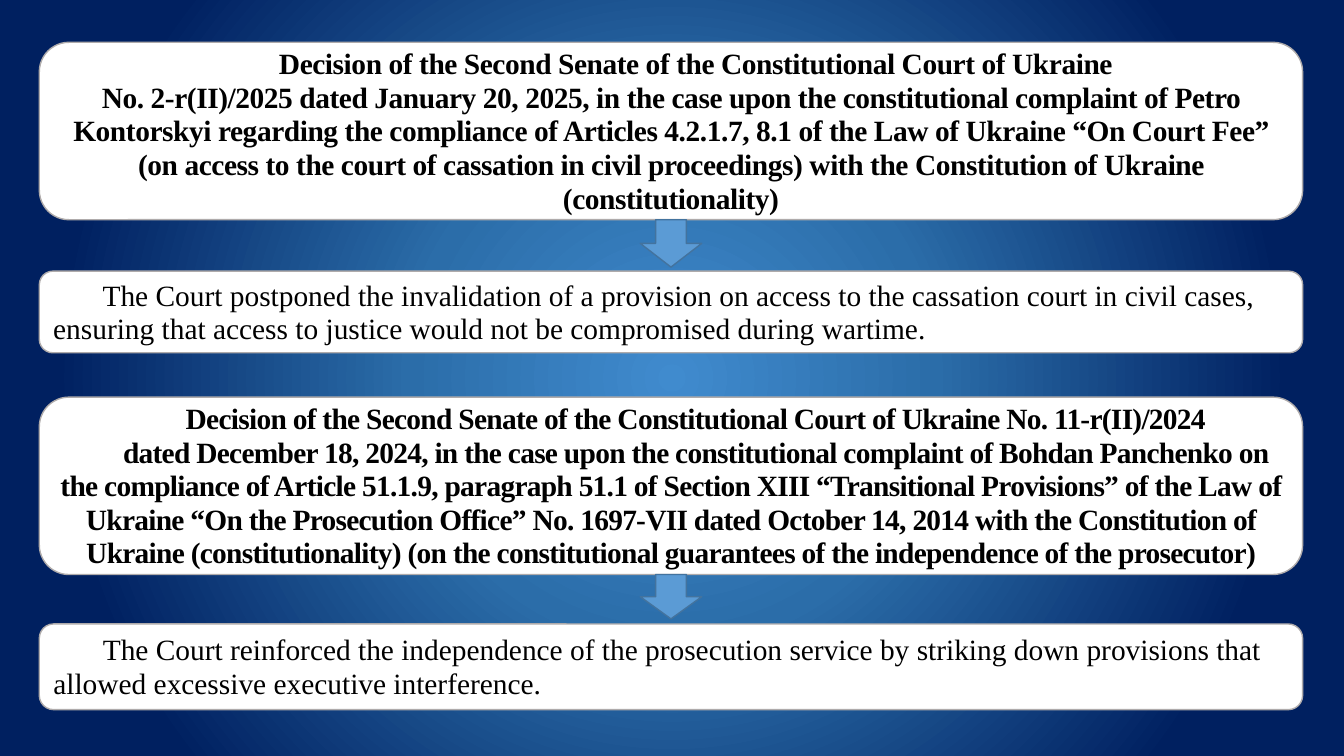
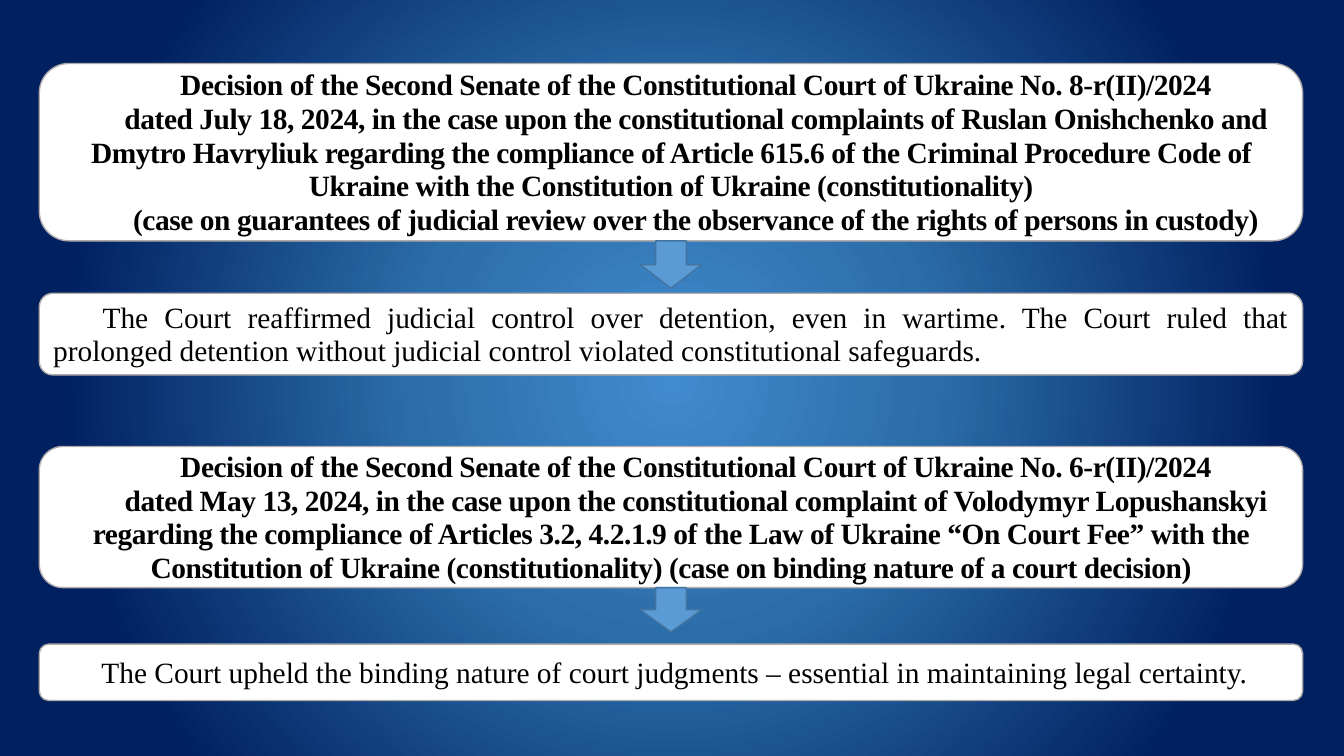
from lxml import etree
from pptx import Presentation
from pptx.dml.color import RGBColor
from pptx.enum import shapes, text
from pptx.oxml import ns
from pptx.util import Inches, Pt

COLORS = {
    "card": "FFFFFF", "card_line": "AFABAB",
    "arrow": "5B9BD5", "arrow_line": "43739E", "ink": "000000",
    "glow": "408BCE", "mid": "2B6DA9", "navy": "002060",
}
GLOW_STOPS = [(0, "glow"), (34, "mid"), (80, "navy")]
CARD_LEFT, CARD_WIDTH, ARROW_WIDTH = 0.39, 12.53, 0.61
FIRST_LINE = 0.49
FONT = {"name": "Times New Roman", "size": Pt(21)}
LEFT, CENTER, JUSTIFY = (
    text.PP_ALIGN.LEFT, text.PP_ALIGN.CENTER, text.PP_ALIGN.JUSTIFY)

SLIDES = [
    [
        {
            "decision": [
                "Decision of the Second Senate of the Constitutional Court of Ukraine\v"
                "No. 2-r(II)/2025 dated January 20, 2025, in the case upon the constitutional "
                "complaint of Petro Kontorskyi regarding the compliance of Articles 4.2.1.7, 8.1 "
                "of the Law of Ukraine “On Court Fee” (on access to the court of cassation in "
                "civil proceedings) with the Constitution of Ukraine (constitutionality)",
            ],
            "outcome": "The Court postponed the invalidation of a provision on access to the "
                       "cassation court in civil cases, ensuring that access to justice would "
                       "not be compromised during wartime.",
            "top": 0.42, "height": 1.76, "arrow": 0.47, "gap": 0.51,
            "outcome_height": 0.81, "tracking": -0.3, "align": LEFT,
        },
        {
            "decision": [
                "Decision of the Second Senate of the Constitutional Court of Ukraine "
                "No. 11-r(II)/2024",
                "dated December 18, 2024, in the case upon the constitutional complaint of "
                "Bohdan Panchenko on the compliance of Article 51.1.9, paragraph 51.1 of Section "
                "XIII “Transitional Provisions” of the Law of Ukraine “On the Prosecution "
                "Office” No. 1697-VII dated October 14, 2014 with the Constitution of Ukraine "
                "(constitutionality) (on the constitutional guarantees of the independence of "
                "the prosecutor)",
            ],
            "outcome": "The Court reinforced the independence of the prosecution service by "
                       "striking down provisions that allowed excessive executive interference.",
            "top": 3.94, "height": 1.76, "arrow": 0.44, "gap": 0.49,
            "outcome_height": 0.85, "tracking": -0.5, "align": LEFT,
        },
    ],
    [
        {
            "decision": [
                "Decision of the Second Senate of the Constitutional Court of Ukraine "
                "No. 8-r(II)/2024",
                "dated July 18, 2024, in the case upon the constitutional complaints of Ruslan "
                "Onishchenko and Dmytro Havryliuk regarding the compliance of Article 615.6 of "
                "the Criminal Procedure Code of Ukraine with the Constitution of Ukraine "
                "(constitutionality)",
                "(case on guarantees of judicial review over the observance of the rights of "
                "persons in custody)",
            ],
            "outcome": "The Court reaffirmed judicial control over detention, even in wartime. "
                       "The Court ruled that prolonged detention without judicial control "
                       "violated constitutional safeguards.",
            "top": 0.63, "height": 1.76, "arrow": 0.47, "gap": 0.52,
            "outcome_height": 0.81, "tracking": -0.3, "align": JUSTIFY,
        },
        {
            "decision": [
                "Decision of the Second Senate of the Constitutional Court of Ukraine "
                "No. 6-r(II)/2024",
                "dated May 13, 2024, in the case upon the constitutional complaint of Volodymyr "
                "Lopushanskyi regarding the compliance of Articles 3.2, 4.2.1.9 of the Law of "
                "Ukraine “On Court Fee” with the Constitution of Ukraine (constitutionality) "
                "(case on binding nature of a court decision)",
            ],
            "outcome": "The Court upheld the binding nature of court judgments – essential in "
                       "maintaining legal certainty.",
            "top": 4.43, "height": 1.4, "arrow": 0.44, "gap": 0.56,
            "outcome_height": 0.56, "tracking": -0.3, "align": LEFT,
        },
    ],
]


def color(name):
    return RGBColor.from_string(COLORS[name])


def paint_background(master):
    fill = master.background.fill
    fill.gradient()
    gradient = master.element.find(".//" + ns.qn("p:bgPr")).find(ns.qn("a:gradFill"))
    stops = "".join(
        f'<a:gs pos="{pos * 1000}"><a:srgbClr val="{COLORS[name]}"/></a:gs>'
        for pos, name in GLOW_STOPS)
    glow = etree.fromstring(
        f'<a:gradFill {ns.nsdecls("a")} rotWithShape="1"><a:gsLst>{stops}</a:gsLst>'
        '<a:path path="circle"><a:fillToRect l="50000" t="50000" r="50000" b="50000"/>'
        '</a:path></a:gradFill>')
    gradient.getparent().replace(gradient, glow)


def add_block(slide, preset, box, style):
    block = slide.shapes.add_shape(preset, *map(Inches, box))
    block.shadow.inherit = False
    block.fill.solid()
    block.fill.fore_color.rgb = color(style)
    block.line.color.rgb = color(style + "_line")
    block.line.width = Pt(1)
    return block


def add_card(slide, top, height, paragraphs, align, bold=False, tracking=0):
    card = add_block(slide, shapes.MSO_SHAPE.ROUNDED_RECTANGLE,
                     (CARD_LEFT, top, CARD_WIDTH, height), "card")
    frame = card.text_frame
    frame.word_wrap = True
    frame.vertical_anchor = text.MSO_ANCHOR.MIDDLE
    for index, wording in enumerate(paragraphs):
        paragraph = frame.add_paragraph() if index else frame.paragraphs[0]
        paragraph.text = wording
        paragraph.alignment = align
        paragraph.line_spacing = Pt(24)
        paragraph._p.get_or_add_pPr().set("indent", str(Inches(FIRST_LINE)))
        for run in paragraph.runs:
            for key, value in {**FONT, "bold": bold}.items():
                setattr(run.font, key, value)
            run.font.color.rgb = color("ink")
            if tracking:
                run._r.get_or_add_rPr().set("spc", str(round(tracking * 100)))


def add_case(slide, case):
    bottom = case["top"] + case["height"]
    add_card(slide, case["top"], case["height"], case["decision"], CENTER,
             bold=True, tracking=case["tracking"])
    add_card(slide, bottom + case["gap"], case["outcome_height"],
             [case["outcome"]], case["align"])
    arrow_left = CARD_LEFT + (CARD_WIDTH - ARROW_WIDTH) / 2
    add_block(slide, shapes.MSO_SHAPE.DOWN_ARROW,
              (arrow_left, bottom, ARROW_WIDTH, case["arrow"]), "arrow")


def main():
    deck = Presentation()
    deck.slide_width, deck.slide_height = Inches(13.33), Inches(7.5)
    paint_background(deck.slide_master)
    for cases in SLIDES:
        slide = deck.slides.add_slide(deck.slide_layouts[6])
        for case in cases:
            add_case(slide, case)
    deck.save("out.pptx")


if __name__ == "__main__":
    main()
